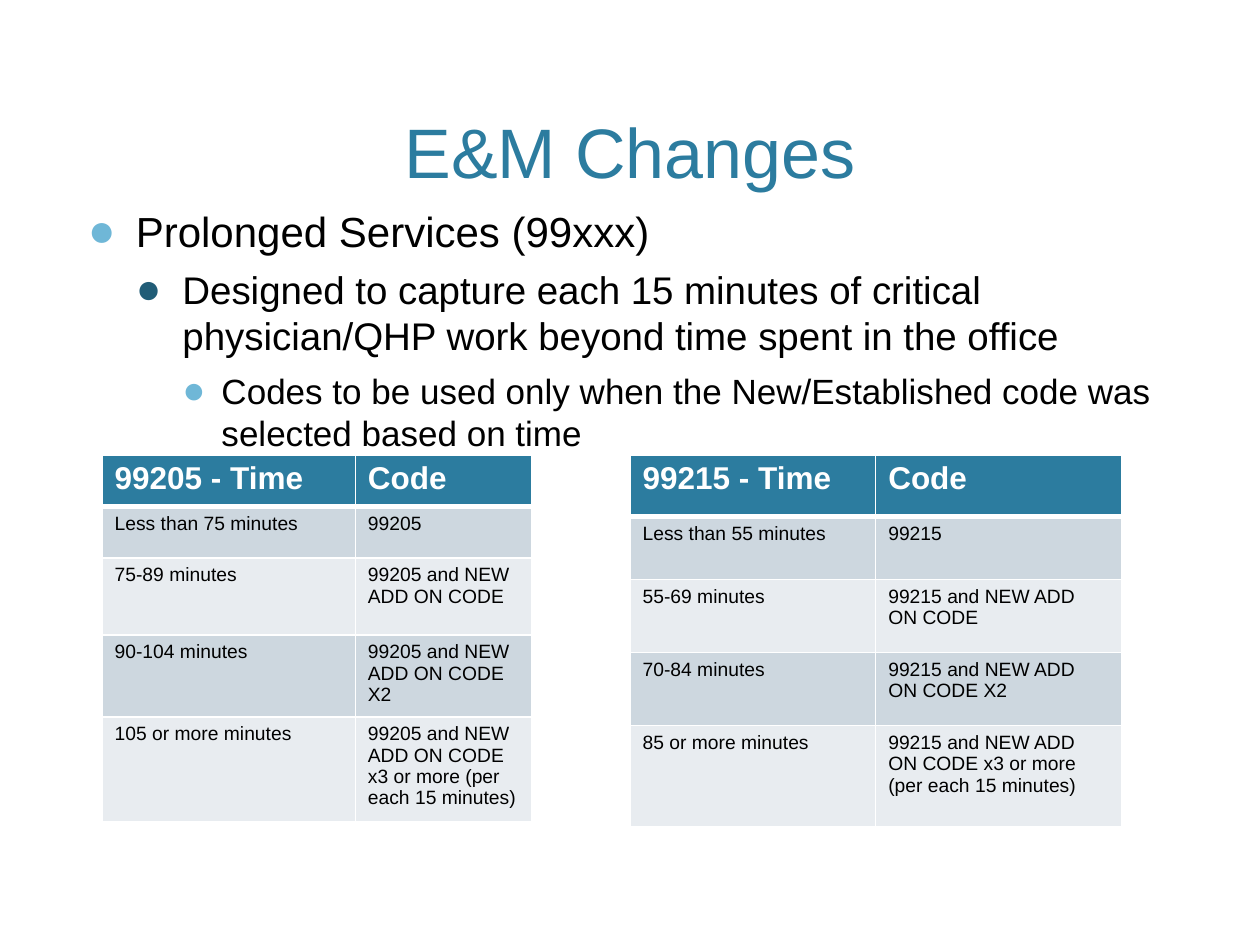
from dataclasses import dataclass

from lxml import etree
from pptx import Presentation
from pptx.dml.color import RGBColor
from pptx.enum.text import MSO_ANCHOR, PP_ALIGN
from pptx.oxml.ns import qn
from pptx.util import Inches, Pt

BOTTOM = MSO_ANCHOR.BOTTOM
CENTER = PP_ALIGN.CENTER
FONT = "Arial"
COLORS = {
    "teal": "2C7C9F",
    "sky": "6FB7D7",
    "deep": "215D77",
    "odd": "CDD7DF",
    "even": "E8ECF0",
    "white": "FFFFFF",
    "black": "000000",
}


@dataclass
class Point:
    text: str
    size: int
    color: str
    left: float
    hang: float


@dataclass
class Grid:
    code: str
    times: list[str]
    left: float
    cols: list[float]
    rows: list[float]


POINTS = [
    Point("Prolonged Services (99xxx)", 24, "sky", 0.38, 0.38),
    Point("Designed to capture each 15 minutes of critical physician/QHP work "
          "beyond time spent in the office", 22, "deep", 0.75, 0.37),
    Point("Codes to be used only when the New/Established code was selected "
          "based on time", 20, "sky", 1.06, 0.31),
]
GRIDS = [
    Grid("99205", ["Less than 75 minutes", "75-89 minutes", "90-104 minutes",
                   "105 or more minutes"],
         0.81, [2.01, 1.4], [0.41, 0.41, 0.61, 0.62, 0.79]),
    Grid("99215", ["Less than 55 minutes", "55-69 minutes", "70-84 minutes",
                   "85 or more minutes"],
         5, [1.95, 1.95], [0.49, 0.5, 0.58, 0.58, 0.8]),
]
ADDONS = ["", " and NEW ADD ON CODE", " and NEW ADD ON CODE X2",
          " and NEW ADD ON CODE x3 or more (per each 15 minutes)"]
GRID_TOP = 3.61


def add_run(para, text: str, size: int, color: str, bold: bool = False) -> None:
    run = para.add_run()
    run.text = text
    font = run.font
    font.name, font.size, font.bold = FONT, Pt(size), bold
    font.color.rgb = RGBColor.from_string(COLORS[color])


def add_box(slide, top: float, height: float):
    box = slide.shapes.add_textbox(Inches(0.6), Inches(top), Inches(8.8), Inches(height))
    box.text_frame.word_wrap = True
    return box.text_frame


def add_bullet(para, point: Point) -> None:
    props = para._p.get_or_add_pPr()
    props.set("marL", str(Inches(point.left)))
    props.set("indent", str(-Inches(point.hang)))
    tint = etree.SubElement(props, qn("a:buClr"))
    etree.SubElement(tint, qn("a:srgbClr"), val=COLORS[point.color])
    etree.SubElement(props, qn("a:buSzPct"), val="110000")
    etree.SubElement(props, qn("a:buFont"), typeface=FONT)
    etree.SubElement(props, qn("a:buChar"), char="●")


def add_points(slide) -> None:
    frame = add_box(slide, 1.58, 4.75)
    for i, point in enumerate(POINTS):
        para = frame.add_paragraph() if i else frame.paragraphs[0]
        add_bullet(para, point)
        para.space_before = Pt(6 if i else 0)
        add_run(para, point.text, point.size, "black")


def set_edges(cell, widths: dict[str, int]) -> None:
    """Draw white cell borders; widths are in points, keyed by side."""
    props = cell._tc.get_or_add_tcPr()
    for i, (side, width) in enumerate(widths.items()):
        line = etree.Element(qn(f"a:ln{side}"), w=str(Pt(width)))
        fill = etree.SubElement(line, qn("a:solidFill"))
        etree.SubElement(fill, qn("a:srgbClr"), val=COLORS["white"])
        props.insert(i, line)


def add_grid(slide, grid: Grid) -> None:
    rows = [(f"{grid.code} - Time", "Code")]
    rows += [(time, grid.code + addon) for time, addon in zip(grid.times, ADDONS)]
    table = slide.shapes.add_table(
        len(rows), len(grid.cols), Inches(grid.left), Inches(GRID_TOP),
        Inches(sum(grid.cols)), Inches(sum(grid.rows))).table
    for col, width in zip(table.columns, grid.cols):
        col.width = Inches(width)
    for r, texts in enumerate(rows):
        table.rows[r].height = Inches(grid.rows[r])
        head = r == 0
        fill = "teal" if head else "odd" if r % 2 else "even"
        for c, text in enumerate(texts):
            cell = table.cell(r, c)
            cell.fill.solid()
            cell.fill.fore_color.rgb = RGBColor.from_string(COLORS[fill])
            set_edges(cell, {"L": 1, "R": 1, "T": 3 if r == 1 else 1, "B": 3 if head else 1})
            add_run(cell.text_frame.paragraphs[0], text, 18 if head else 11,
                    "white" if head else "black", head)


def main() -> None:
    deck = Presentation()
    deck.slide_width, deck.slide_height = Inches(10), Inches(7.5)
    slide = deck.slides.add_slide(deck.slide_layouts[6])
    title = add_box(slide, 0.12, 1.46)
    title.vertical_anchor = BOTTOM
    title.paragraphs[0].alignment = CENTER
    add_run(title.paragraphs[0], "E&M Changes", 40, "teal")
    add_points(slide)
    for grid in GRIDS:
        add_grid(slide, grid)
    deck.save("out.pptx")


if __name__ == "__main__":
    main()
